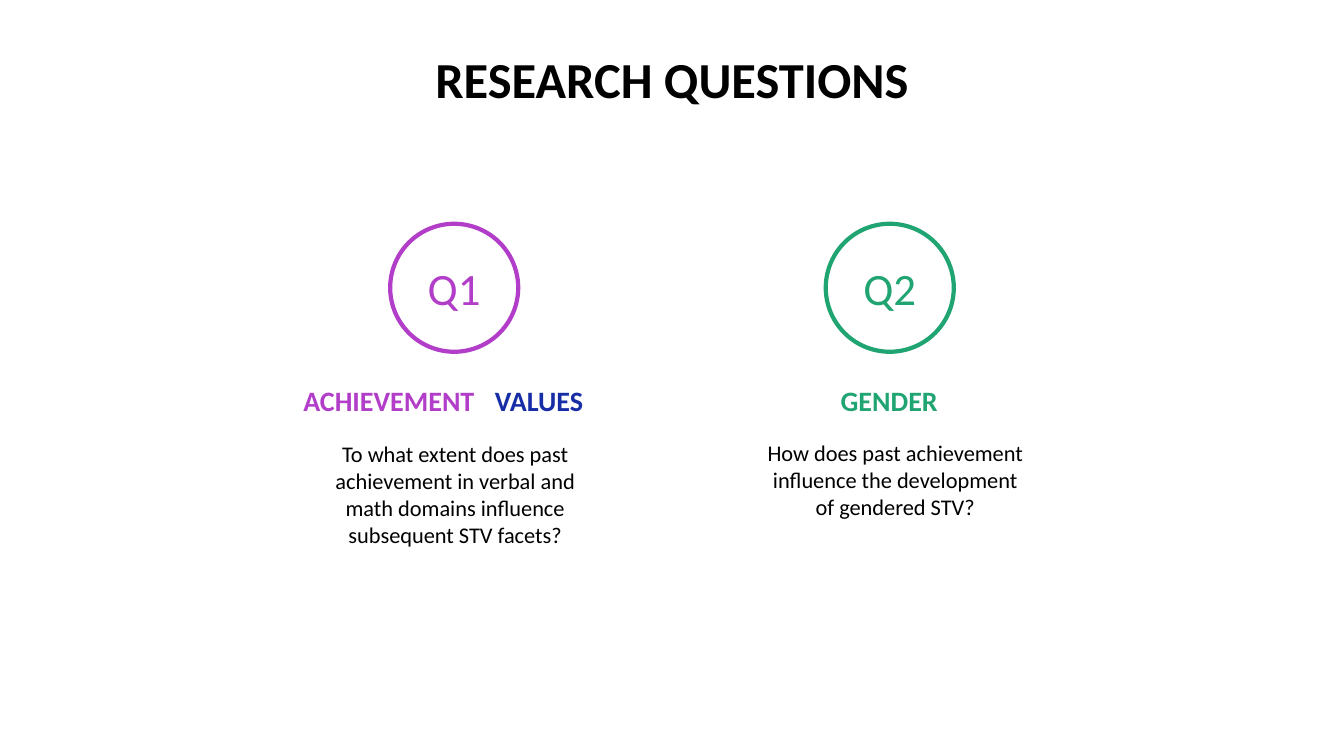
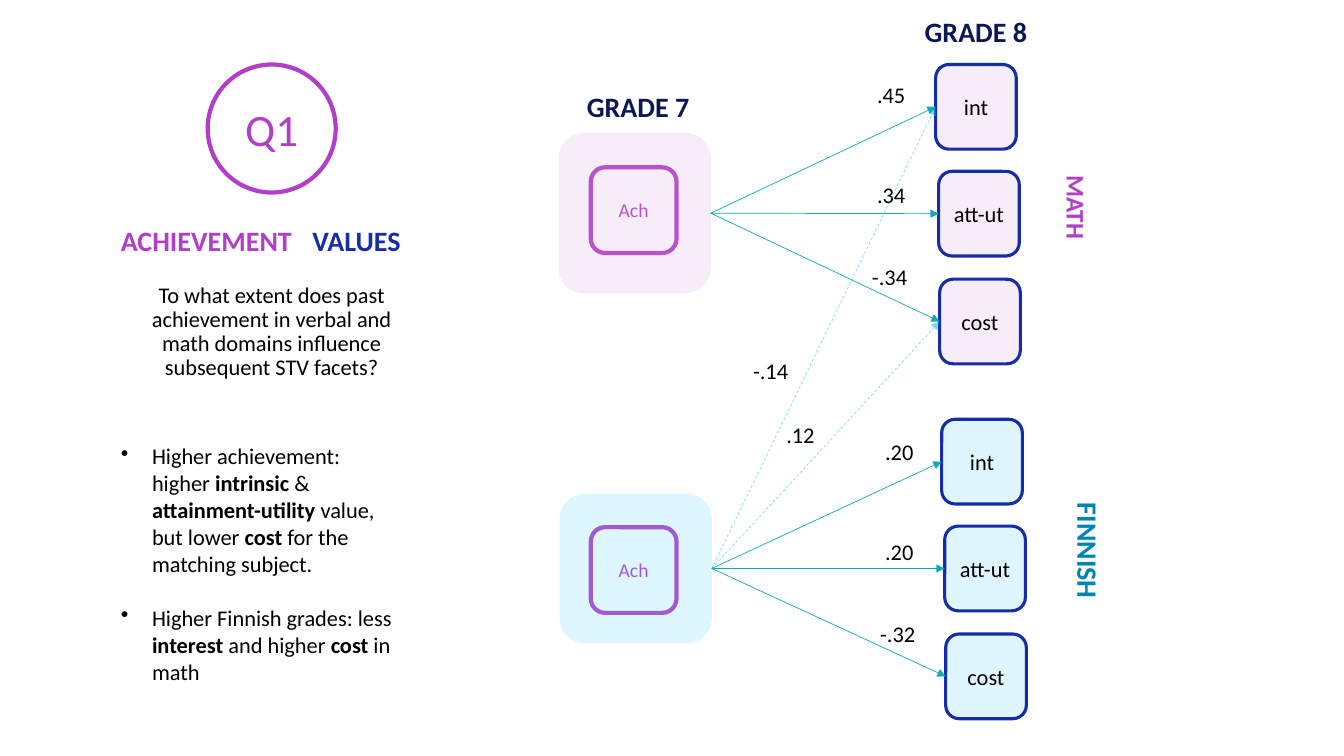
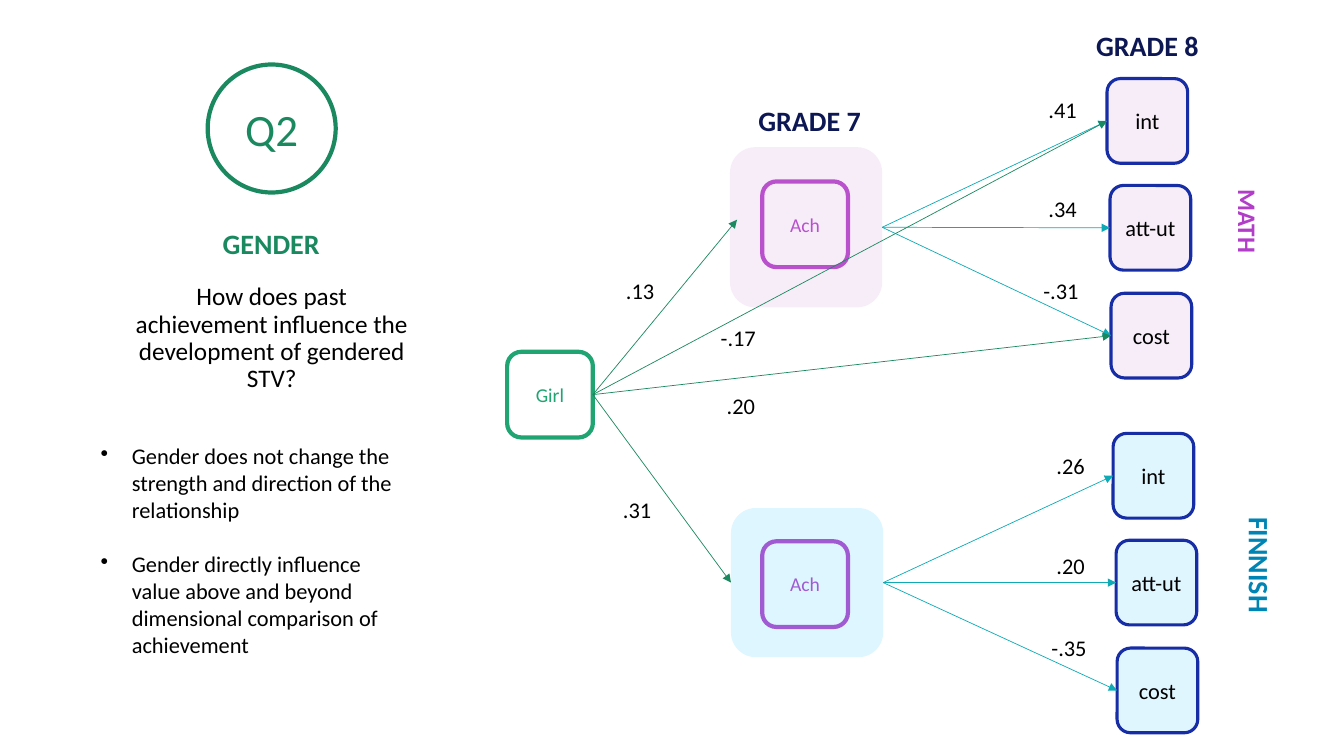
import pptx
import pptx.dml.color
import pptx.enum.shapes
import pptx.enum.text
import pptx.oxml
import pptx.oxml.ns
import pptx.util

Inches = pptx.util.Inches
Pt = pptx.util.Pt
SHAPES = pptx.enum.shapes.MSO_SHAPE
ALIGN = pptx.enum.text.PP_ALIGN

FONT = "Calibri"
BLACK, WHITE, NAVY, BLUE = "000000", "FFFFFF", "0C1753", "172DA6"
PURPLE, GREEN, DARK_GREEN = "B13DC8", "20A472", "1B895F"
TEAL, SKY, FINNISH_BLUE = "0EABB7", "00B0F0", "0084B4"

Q1_HEADING = [("ACHIEVEMENT", PURPLE, -0.96, ALIGN.LEFT), ("VALUES", BLUE, 0.94, ALIGN.LEFT)]
Q1_TEXT = "To what extent does past achievement in verbal and math domains influence subsequent STV facets?"
Q2_TEXT = "How does past achievement influence the development of gendered STV?"

FACETS = [("int", 3.74, 0.51), ("att-ut", 3.77, 1.57), ("cost", 3.78, 2.64)]
FACET_VALUES = [(3.06, 0.63), (3.06, 1.62), (3.01, 2.43)]
SUBJECTS = {
    "MATH": dict(panel=(0, 1.19, 1.51, 1.59), tint="D9A5E3", fill="F7EDF9", grade_top=1.53,
                 facet_shift=(0, 0), value_shift=(0, 0),
                 name=(4.37, 1.76, 1.54), size=18, color=PURPLE),
    "FINNISH": dict(panel=(0.01, 4.77, 1.51, 1.48), tint="5DD4FF", fill="DFF6FF", grade_top=5.1,
                    facet_shift=(0.06, 3.52), value_shift=(0.08, 3.54),
                    name=(4.29, 5.17, 1.96), size=20, color=FINNISH_BLUE),
}


def rgb(value):
    """Turn a hex string into a colour."""
    return pptx.dml.color.RGBColor.from_string(value)


def add_alpha(fill_parent, percent):
    """Make the solid colour inside an element partly transparent."""
    color = fill_parent.find(".//" + pptx.oxml.ns.qn("a:srgbClr"))
    alpha = color.makeelement(pptx.oxml.ns.qn("a:alpha"), {"val": str(percent * 1000)})
    color.append(alpha)


def add_bullet(para):
    """Give a paragraph a hanging bullet."""
    properties = para._p.get_or_add_pPr()
    indent = Inches(0.31)
    properties.set("marL", str(indent))
    properties.set("indent", str(-indent))
    bullet = properties.makeelement(pptx.oxml.ns.qn("a:buChar"), {"char": "•"})
    properties.append(bullet)


def write(box, text, size=16, color=BLACK, bold=False, align=ALIGN.LEFT,
          line_spacing=None, bullets=False, gap=0):
    """Fill a box with paragraphs split at line ends; asterisks enclose bold spans."""
    frame = box.text_frame
    frame.word_wrap = True
    for index, line in enumerate(text.split("\n")):
        para = frame.add_paragraph() if index else frame.paragraphs[0]
        para.alignment = align
        if line_spacing:
            para.line_spacing = line_spacing
        if index and gap:
            para.space_before = Pt(gap)
        if bullets:
            add_bullet(para)
        for position, part in enumerate(line.split("*")):
            span = para.add_run()
            span.text = part
            span.font.name = FONT
            span.font.size = Pt(size)
            span.font.bold = bold or position % 2 == 1
            span.font.color.rgb = rgb(color)


def add_text(page, left, top, width, height, text, rotation=0, **style):
    """Place a text box."""
    box = page.shapes.add_textbox(Inches(left), Inches(top), Inches(width), Inches(height))
    box.rotation = rotation
    write(box, text, **style)
    return box


def add_heading(page, left, top, width, text, color=NAVY, size=20, align=ALIGN.CENTER, rotation=0):
    """Place a bold one-line heading."""
    return add_text(page, left, top, width, 0.33, text, rotation=rotation, size=size,
                    color=color, bold=True, align=align, line_spacing=0.9)


def add_block(page, kind, left, top, width, height, fill, line=None, line_width=3,
              alpha=None, text="", **style):
    """Place a filled shape with an optional outline and centred text."""
    block = page.shapes.add_shape(kind, Inches(left), Inches(top), Inches(width), Inches(height))
    block.shadow.inherit = False
    block.fill.solid()
    block.fill.fore_color.rgb = rgb(fill)
    if alpha:
        add_alpha(block._element.spPr, alpha)
    if line:
        block.line.color.rgb = rgb(line)
        block.line.width = Pt(line_width)
    else:
        block.line.fill.background()
    if text:
        block.text_frame.vertical_anchor = pptx.enum.text.MSO_ANCHOR.MIDDLE
        write(block, text, align=ALIGN.CENTER, **style)
    return block


def add_node(page, left, top, text, color):
    """Place a small outlined square for one variable."""
    return add_block(page, SHAPES.ROUNDED_RECTANGLE, left, top, 0.85, 0.85, WHITE,
                     line=color, text=text, size=14, color=color)


def add_arrow(page, source, target=None, point=(0, 0), color=TEAL, dashed=False):
    """Draw an arrow from a block's right side to a block's left side or to a point."""
    arrow = page.shapes.add_connector(pptx.enum.shapes.MSO_CONNECTOR.STRAIGHT, 0, 0,
                                      Inches(point[0]), Inches(point[1]))
    arrow.begin_connect(source, 3)
    if target is not None:
        arrow.end_connect(target, 1)
    arrow.line.color.rgb = rgb(color)
    arrow.line.width = Pt(0.5)
    properties = arrow._element.spPr
    if dashed:
        arrow.line.dash_style = pptx.enum.dml.MSO_LINE.DASH
        add_alpha(properties, 50)
    outline = properties.find(pptx.oxml.ns.qn("a:ln"))
    outline.append(outline.makeelement(pptx.oxml.ns.qn("a:tailEnd"), {"type": "triangle"}))
    properties.append(properties.makeelement(pptx.oxml.ns.qn("a:effectLst"), {}))
    return arrow


def add_question(page, left, top, label, color, headings, drop=1.57):
    """Place a question's circle with its coloured headings below."""
    add_block(page, SHAPES.OVAL, left, top, 1.27, 1.27, WHITE, line=color,
              text=label, size=32, color=color)
    for text, heading_color, shift, align in headings:
        width = 1.16 if text == "VALUES" else 1.96
        add_heading(page, left + shift, top + drop, width, text, heading_color, align=align)


def gender_heading(color):
    """Return the heading of the second question in a colour."""
    return [("GENDER", color, -0.35, ALIGN.CENTER)]


def add_subject(page, left, top, name, values):
    """Place one subject's panel, facets, arrows and values; return panel and facets."""
    subject = SUBJECTS[name]
    add_node(page, left + 0.32, top + subject["grade_top"], "Ach", PURPLE)
    panel_left, panel_top, width, height = subject["panel"]
    panel = add_block(page, SHAPES.ROUNDED_RECTANGLE, left + panel_left, top + panel_top,
                      width, height, subject["tint"], alpha=20)
    name_left, name_top, name_width = subject["name"]
    add_heading(page, left + name_left, top + name_top, name_width, name,
                subject["color"], subject["size"], rotation=90)
    across, down = subject["facet_shift"]
    facets = [add_block(page, SHAPES.ROUNDED_RECTANGLE, left + x + across, top + y + down,
                        0.8, 0.84, subject["fill"], line=BLUE, line_width=2.25, text=text)
              for text, x, y in FACETS]
    across, down = subject["value_shift"]
    for facet, value, (x, y) in zip(facets, values, FACET_VALUES):
        add_arrow(page, panel, facet)
        add_text(page, left + x + across, top + y + down, 0.69, 0.37, value)
    return panel, facets


def add_diagram(page, left, top, math_values, finnish_values):
    """Place the two-grade path diagram; return both subjects' parts."""
    add_heading(page, left + 0.02, top + 0.75, 1.54, "GRADE 7")
    add_heading(page, left + 3.37, top, 1.54, "GRADE 8")
    return (add_subject(page, left, top, "MATH", math_values),
            add_subject(page, left, top, "FINNISH", finnish_values))


def add_findings(page, left, width, height, text):
    """Place the bulleted findings."""
    add_text(page, left, 4.34, width, height, text, bullets=True, gap=19.5)


def build_questions(page):
    """Build the overview of both research questions."""
    add_text(page, 0.25, 0.5, 12.83, 0.69, "RESEARCH QUESTIONS", size=36, bold=True,
             align=ALIGN.CENTER, line_spacing=0.9)
    add_question(page, 3.87, 2.22, "Q1", PURPLE, Q1_HEADING)
    add_text(page, 3.21, 4.32, 2.61, 0.77, Q1_TEXT, align=ALIGN.CENTER)
    add_question(page, 8.19, 2.22, "Q2", GREEN, gender_heading(GREEN))
    add_text(page, 7.51, 4.31, 2.74, 0.77, Q2_TEXT, align=ALIGN.CENTER)


def build_achievement(page):
    """Build the results for the first question."""
    add_question(page, 2.06, 0.64, "Q1", PURPLE, Q1_HEADING)
    add_text(page, 1.21, 2.77, 2.97, 1.06, Q1_TEXT, align=ALIGN.CENTER, line_spacing=0.9)
    add_findings(page, 1.1, 2.97, 2.52,
                 "Higher achievement: higher *intrinsic *& *attainment-utility *value, "
                 "but lower *cost *for the matching subject.\n"
                 "Higher Finnish grades: less *interest* and higher *cost *in math")
    (_, math_facets), (finnish_panel, _) = add_diagram(
        page, 5.54, 0.13, [".45", ".34", "-.34"], [".20", ".20", "-.32"])
    for facet, value, x, y in [(math_facets[0], "-.14", 7.37, 3.49),
                               (math_facets[2], ".12", 7.7, 4.13)]:
        add_arrow(page, finnish_panel, facet, color=SKY, dashed=True)
        add_text(page, x, y, 0.69, 0.37, value)


def build_gender(page):
    """Build the results for the second question."""
    add_question(page, 2.06, 0.64, "Q2", DARK_GREEN, gender_heading(DARK_GREEN), drop=1.6)
    add_text(page, 1.21, 2.77, 2.97, 1.06, Q2_TEXT, size=18, align=ALIGN.CENTER, line_spacing=0.9)
    add_findings(page, 0.9, 3.17, 2.26,
                 "Gender does not change the strength and direction of the relationship\n"
                 "Gender directly influence value above and beyond dimensional comparison of achievement")
    (_, math_facets), (finnish_panel, _) = add_diagram(
        page, 7.24, 0.27, [".41", ".34", "-.31"], [".26", ".20", "-.35"])
    girl = add_node(page, 5.03, 3.49, "Girl", GREEN)
    add_arrow(page, girl, point=(7.31, 2.18), color=DARK_GREEN)
    for target in (finnish_panel, math_facets[0], math_facets[2]):
        add_arrow(page, girl, target, color=DARK_GREEN)
    for value, x, y in [(".31", 6.08, 4.87), (".13", 6.11, 2.7),
                        ("-.17", 7.05, 3.17), (".20", 7.11, 3.84)]:
        add_text(page, x, y, 0.64, 0.37, value)


def main():
    """Build and save the deck."""
    deck = pptx.Presentation()
    deck.slide_width = Inches(13.33)
    deck.slide_height = Inches(7.5)
    for build in (build_questions, build_achievement, build_gender):
        build(deck.slides.add_slide(deck.slide_layouts[6]))
    deck.save("out.pptx")


if __name__ == "__main__":
    main()
